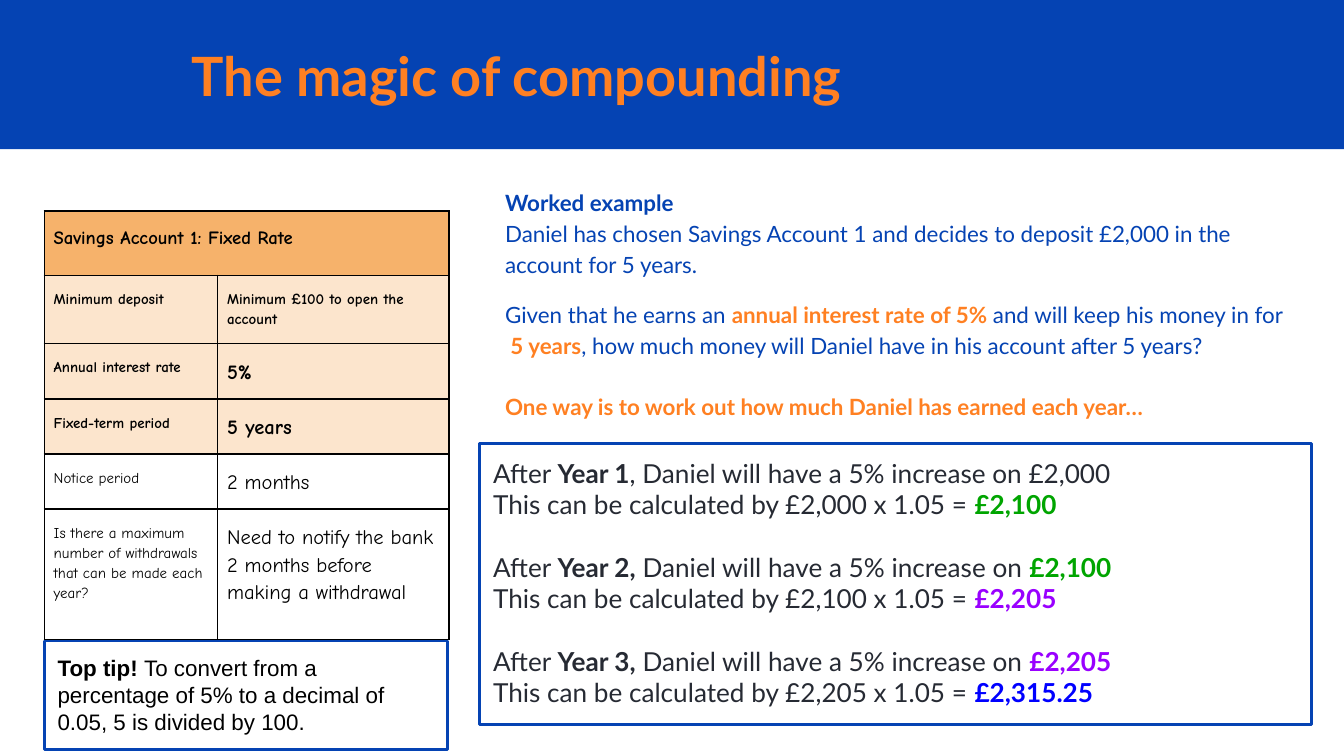
from lxml import etree
from pptx import Presentation
from pptx import util as u
from pptx.dml.color import RGBColor
from pptx.enum import shapes, text
from pptx.oxml.ns import qn

BLUE, ORANGE, INK, BLACK = "0543B3", "FF8022", "262A33", "000000"
GREEN, PURPLE, BRIGHT_BLUE = "00A500", "9900FF", "0000FF"
HEADER, SHADE, WHITE = "F6B26B", "FCE5CD", "FFFFFF"


def color(value):
    return RGBColor.from_string(value)


def add_run(p, words, size, font, ink, bold=False):
    r = p.add_run()
    r.text = words
    r.font.size, r.font.name, r.font.bold = u.Pt(size), font, bold
    r.font.color.rgb = color(ink)


def write(tf, paragraphs, size, font, ink, spacing=None, indent=0, before=()):
    tf.word_wrap = True
    for i, runs in enumerate(paragraphs):
        p = tf.paragraphs[0] if i == 0 else tf.add_paragraph()
        p.alignment = text.PP_ALIGN.LEFT
        if indent:
            p._p.get_or_add_pPr().set("marL", str(u.Inches(indent)))
        if spacing:
            p.line_spacing = spacing
        if i < len(before) and before[i]:
            p.space_before = u.Pt(before[i])
        for words, *bold_ink in runs:
            if words == "\n":
                p.add_line_break()
            else:
                add_run(p, words, size, font, bold_ink[0] if bold_ink else ink, bool(bold_ink))


def set_margins(tf, anchor=text.MSO_ANCHOR.TOP):
    tf.margin_left = tf.margin_right = u.Inches(0.1)
    tf.margin_top = tf.margin_bottom = u.Inches(0.1)
    tf.vertical_anchor = anchor


def add_text(s, box, anchor=text.MSO_ANCHOR.TOP):
    tf = s.shapes.add_textbox(*map(u.Inches, box)).text_frame
    set_margins(tf, anchor)
    return tf


def add_box(s, box, fill=None, line=None):
    sp = s.shapes.add_shape(shapes.MSO_SHAPE.RECTANGLE, *map(u.Inches, box))
    sp.shadow.inherit = False
    if fill:
        sp.fill.solid()
        sp.fill.fore_color.rgb = color(fill)
    else:
        sp.fill.background()
    if line:
        sp.line.color.rgb = color(line)
        sp.line.width = u.Pt(1.5)
    else:
        sp.line.fill.background()
    set_margins(sp.text_frame)
    return sp.text_frame


def add_banner(s, box):
    x, y, w, h = box
    add_box(s, box, fill=BLUE)
    tf = add_text(s, (x + 1.33, y + 0.28, w - 1.54, h - 0.55), text.MSO_ANCHOR.MIDDLE)
    write(tf, [[("The magic of compounding", ORANGE)]], 29, "Lato", ORANGE)


def add_example(s, box):
    paragraphs = [
        [("Worked example", BLUE)],
        [("Daniel has chosen Savings Account 1 and decides to deposit £2,000 in the account for 5 years.",)],
        [("Given that he earns an ",), ("annual interest rate of 5% ", ORANGE),
         ("and will keep his money in for",), ("\n",), (" 5 years", ORANGE),
         (", how much money will Daniel have in his account after 5 years?",)],
        [("One way is to work out how much Daniel has earned each year…", ORANGE)],
    ]
    write(add_text(s, box), paragraphs, 12, "Lato", BLUE, 1.15, 0.11, (0, 0, 10, 16.6))


def add_calculations(s, box):
    balances = [("£2,000",), ("£2,100", GREEN), ("£2,205", PURPLE), ("£2,315.25", BRIGHT_BLUE)]
    paragraphs = []
    for year, (start, end) in enumerate(zip(balances, balances[1:]), 1):
        paragraphs += [
            [("After ",), (f"Year {year},", INK), (" Daniel will have a 5% increase on ",), start],
            [(f"This can be calculated by {start[0]} x 1.05 = ",), end],
        ]
    paragraphs[0][1:3] = [("Year 1", INK), (", Daniel will have a 5% increase on ",)]
    write(add_box(s, box, WHITE, BLUE), paragraphs, 14, "Lato", INK,
          before=(0, 0, 16.8, 0, 16.8, 0))


def add_tip(s, box):
    runs = [("Top tip! ", BLACK),
            ("To convert from a percentage of 5% to a decimal of 0.05, 5 is divided by 100.",)]
    write(add_box(s, box, line=BLUE), [runs], 12, "Arial", BLACK)


def add_borders(cell):
    tcPr = cell._tc.get_or_add_tcPr()
    for i, side in enumerate(("lnL", "lnR", "lnT", "lnB")):
        ln = etree.Element(qn(f"a:{side}"), w=str(u.Pt(1)))
        fill = etree.SubElement(ln, qn("a:solidFill"))
        etree.SubElement(fill, qn("a:srgbClr"), val=BLACK)
        tcPr.insert(i, ln)


def fill_cell(cell, words, size, bold, fill):
    cell.margin_left = cell.margin_right = u.Inches(0.07)
    cell.margin_top = cell.margin_bottom = u.Inches(0.1)
    if fill:
        cell.fill.solid()
        cell.fill.fore_color.rgb = color(fill)
    else:
        cell.fill.background()
    add_borders(cell)
    run = (words, BLACK) if bold else (words,)
    write(cell.text_frame, [[run]], size, "Comic Neue", BLACK, 1.15)


def add_account(s, box):
    rows = [
        ("Savings Account 1: Fixed Rate", "", 10, 0.48, HEADER),
        ("Minimum deposit", "Minimum £100 to open the account", 8, 0.5, SHADE),
        ("Annual interest rate", "5%", 11, 0.41, SHADE),
        ("Fixed-term period", "5 years", 11, 0.41, SHADE),
        ("Notice period", "2 months", 11, 0.41, None),
        ("Is there a maximum number of withdrawals that can be made each year?",
         "Need to notify the bank 2 months before making a withdrawal", 11, 0.97, None),
    ]
    table = s.shapes.add_table(len(rows), 2, *map(u.Inches, box)).table
    table.first_row = table.horz_banding = False
    for column, width in zip(table.columns, (1.29, 1.72)):
        column.width = u.Inches(width)
    table.cell(0, 0).merge(table.cell(0, 1))
    for i, (label, value, size, height, fill) in enumerate(rows):
        table.rows[i].height = u.Inches(height)
        fill_cell(table.cell(i, 0), label, 8 if i else size, bool(fill), fill)
        if i:
            fill_cell(table.cell(i, 1), value, size, bool(fill), fill)
        else:
            add_borders(table.cell(i, 1))


def main():
    prs = Presentation()
    prs.slide_width = u.Inches(10)
    prs.slide_height = prs.slide_width * 9 // 16
    s = prs.slides.add_slide(prs.slide_layouts[6])
    add_banner(s, (0, 0, 10, 1.11))
    add_example(s, (3.55, 1.28, 6.24, 1.94))
    add_calculations(s, (3.57, 3.3, 6.19, 2.09))
    add_tip(s, (0.33, 4.77, 3, 0.81))
    add_account(s, (0.33, 1.57, 3.01, 3.18))
    prs.save("out.pptx")


if __name__ == "__main__":
    main()
